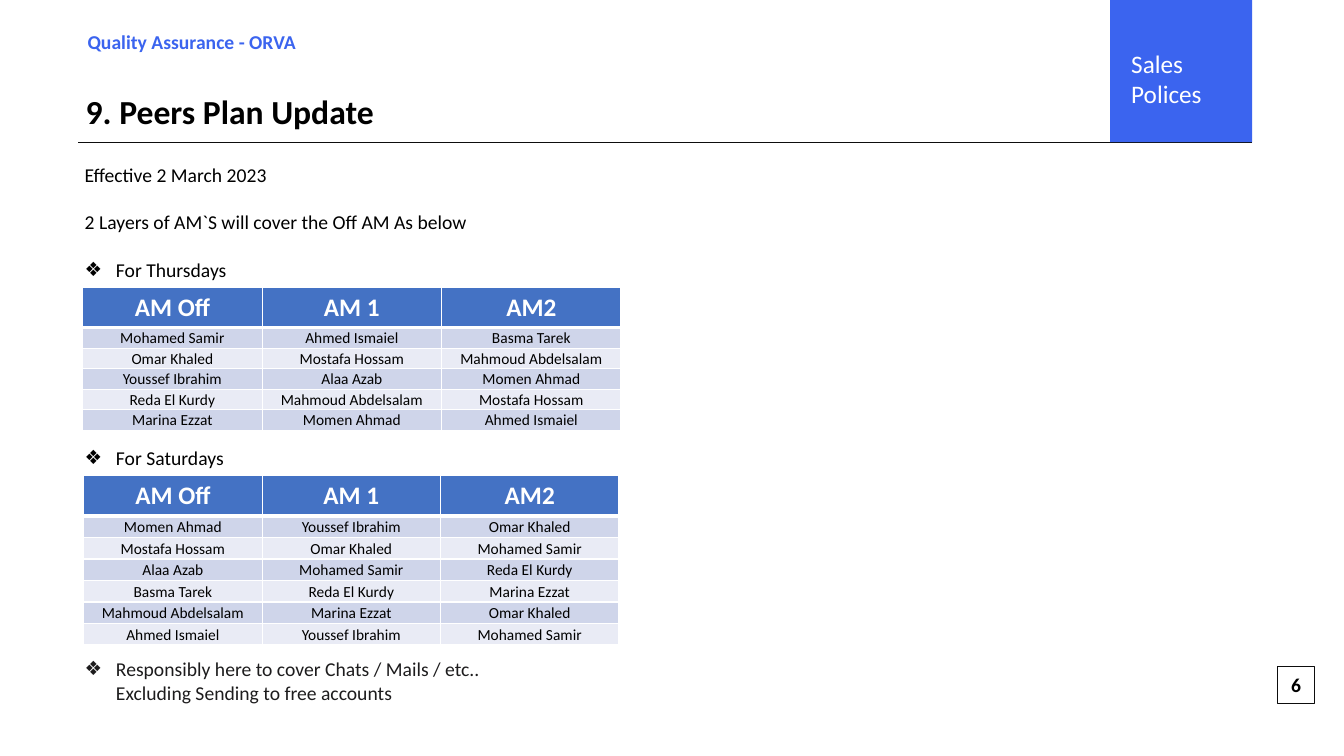
import dataclasses

import lxml.etree
import pptx
import pptx.dml.color
import pptx.enum.shapes
import pptx.enum.text
import pptx.oxml.ns
import pptx.util

Inches = pptx.util.Inches
Pt = pptx.util.Pt
Align = pptx.enum.text.PP_ALIGN
Anchor = pptx.enum.text.MSO_ANCHOR
Auto = pptx.enum.text.MSO_AUTO_SIZE

FONT = "Calibri"
PITCH = 16.8  # points from one body line to the next
HEAD_HIGH = 0.4
COLORS = {
    "black": "000000", "ink": "0D0D0D", "note": "1D1C1D", "white": "FFFFFF",
    "brand": "3B64EF", "head": "4472C4", "odd": "CFD5EA", "even": "E9EBF5",
}


@dataclasses.dataclass
class Line:
    text: str
    skip: int = 0  # empty body lines left above
    bullet: bool = False
    color: str = "black"


@dataclasses.dataclass
class Roster:
    left: float
    top: float
    width: float
    height: float
    rows: list[tuple[str, str, str]]


HEADS = ("AM Off", "AM 1", "AM2")
LINES = [
    Line("Effective 2 March 2023"),
    Line("2 Layers of AM`S will cover the Off AM As below", 1),
    Line("For Thursdays", 1, True),
    Line("For Saturdays", 7, True),
    Line("Responsibly here to cover Chats / Mails / etc..\n"
         "Excluding Sending to free accounts", 8, True, "note"),
]
ROSTERS = [
    Roster(0.82, 2.85, 5.34, 1.42, [
        ("Mohamed Samir", "Ahmed Ismaiel", "Basma Tarek"),
        ("Omar Khaled", "Mostafa Hossam", "Mahmoud Abdelsalam"),
        ("Youssef Ibrahim", "Alaa Azab", "Momen Ahmad"),
        ("Reda El Kurdy", "Mahmoud Abdelsalam", "Mostafa Hossam"),
        ("Marina Ezzat", "Momen Ahmad", "Ahmed Ismaiel"),
    ]),
    Roster(0.83, 4.72, 5.31, 1.68, [
        ("Momen Ahmad", "Youssef Ibrahim", "Omar Khaled"),
        ("Mostafa Hossam", "Omar Khaled", "Mohamed Samir"),
        ("Alaa Azab", "Mohamed Samir", "Reda El Kurdy"),
        ("Basma Tarek", "Reda El Kurdy", "Marina Ezzat"),
        ("Mahmoud Abdelsalam", "Marina Ezzat", "Omar Khaled"),
        ("Ahmed Ismaiel", "Youssef Ibrahim", "Mohamed Samir"),
    ]),
]


def tint(name: str) -> pptx.dml.color.RGBColor:
    return pptx.dml.color.RGBColor.from_string(COLORS[name])


def add_node(parent, tag: str, **attrs: str):
    return lxml.etree.SubElement(parent, pptx.oxml.ns.qn(tag), attrs)


def place(shape, left: float, top: float, width: float, height: float) -> None:
    shape.left, shape.top = Inches(left), Inches(top)
    shape.width, shape.height = Inches(width), Inches(height)


def write(para, text: str, size: float, color: str, bold: bool = False,
          align=Align.LEFT) -> None:
    """Fill a paragraph with runs, breaking the line at each newline."""
    para.alignment = align
    for i, part in enumerate(text.split("\n")):
        if i:
            para.add_line_break()
        run = para.add_run()
        run.text = part
        run.font.name, run.font.size, run.font.bold = FONT, Pt(size), bold
        run.font.color.rgb = tint(color)


def add_box(slide, left: float, top: float, width: float, height: float):
    box = slide.shapes.add_shape(
        pptx.enum.shapes.MSO_SHAPE.RECTANGLE,
        Inches(left), Inches(top), Inches(width), Inches(height))
    box.shadow.inherit = False
    box.text_frame.vertical_anchor = Anchor.MIDDLE
    return box


def add_title(slide) -> None:
    title = slide.shapes.title
    place(title, 0.75, 0.85, 3.17, 0.5)
    frame = title.text_frame
    frame.word_wrap, frame.auto_size = False, Auto.SHAPE_TO_FIT_TEXT
    frame.vertical_anchor = Anchor.TOP
    write(frame.paragraphs[0], "9. Peers Plan Update", 24, "black", True)


def add_body(slide) -> None:
    body = slide.placeholders[1]
    place(body, 0.74, 1.57, 12.28, 5.6)
    frame = body.text_frame
    frame.auto_size, frame.vertical_anchor = Auto.NONE, Anchor.TOP
    for i, line in enumerate(LINES):
        para = frame.add_paragraph() if i else frame.paragraphs[0]
        para.line_spacing = Pt(PITCH)
        para.space_before, para.space_after = Pt(PITCH * line.skip), Pt(0)
        write(para, line.text, 14, line.color)
        props = para._p.get_or_add_pPr()
        indent = Inches(0.31) if line.bullet else 0
        props.set("marL", str(indent))
        props.set("indent", str(-indent))
        if line.bullet:
            add_node(props, "a:buChar", char="❖")
        else:
            add_node(props, "a:buNone")


def edge_cell(cell, base: float) -> None:
    """Draw white cell borders, with the given bottom width in points."""
    props = cell._tc.get_or_add_tcPr()
    for side, wide in (("L", 1), ("R", 1), ("T", 1), ("B", base)):
        edge = add_node(props, f"a:ln{side}", w=str(Pt(wide)))
        add_node(add_node(edge, "a:solidFill"), "a:srgbClr", val=COLORS["white"])


def fill_cell(cell, text: str, row: int) -> None:
    edge_cell(cell, 1 if row else 3)
    cell.fill.solid()
    para = cell.text_frame.paragraphs[0]
    if row == 0:
        cell.fill.fore_color.rgb = tint("head")
        write(para, text, 18, "white", True, Align.CENTER)
        return
    cell.fill.fore_color.rgb = tint("odd" if row % 2 else "even")
    cell.vertical_anchor = Anchor.MIDDLE
    cell.margin_left = cell.margin_right = cell.margin_top = Inches(0.01)
    cell.margin_bottom = 0
    write(para, text, 11, "black", align=Align.CENTER)


def add_roster(slide, roster: Roster) -> None:
    rows = [HEADS, *roster.rows]
    table = slide.shapes.add_table(
        len(rows), len(HEADS), Inches(roster.left), Inches(roster.top),
        Inches(roster.width), Inches(roster.height)).table
    table.horz_banding = False
    row_high = (roster.height - HEAD_HIGH) / len(roster.rows)
    for r, names in enumerate(rows):
        table.rows[r].height = Inches(row_high if r else HEAD_HIGH)
        for c, name in enumerate(names):
            fill_cell(table.cell(r, c), name, r)


def add_frame(slide) -> None:
    """Draw the page number, header rule, department and section tag."""
    page = add_box(slide, 12.67, 6.61, 0.37, 0.37)
    page.fill.background()
    page.line.color.rgb, page.line.width = tint("ink"), Pt(1)
    write(page.text_frame.paragraphs[0], "6", 14, "black", True, Align.CENTER)

    rule = slide.shapes.add_connector(
        pptx.enum.shapes.MSO_CONNECTOR.STRAIGHT,
        Inches(12.42), Inches(1.41), Inches(0.77), Inches(1.41))
    rule.line.color.rgb, rule.line.width = tint("ink"), Pt(0.5)
    add_node(rule._element.spPr, "a:effectLst")

    dept = slide.shapes.add_textbox(
        Inches(0.77), Inches(0.25), Inches(2.3), Inches(0.34))
    dept.text_frame.word_wrap = True
    write(dept.text_frame.paragraphs[0], "Quality Assurance - ORVA", 14, "brand", True)

    tag = add_box(slide, 11.01, 0, 1.41, 1.41)
    tag.fill.solid()
    tag.fill.fore_color.rgb = tint("brand")
    tag.line.fill.background()
    tag.text_frame.margin_left, tag.text_frame.margin_top = Inches(0.21), Inches(0.19)
    write(tag.text_frame.paragraphs[0], "Sales", 18, "white")
    write(tag.text_frame.add_paragraph(), "Polices", 18, "white")


def main() -> None:
    deck = pptx.Presentation()
    deck.slide_width, deck.slide_height = Inches(13.33), Inches(7.5)
    slide = deck.slides.add_slide(deck.slide_layouts[1])
    add_title(slide)
    add_body(slide)
    add_frame(slide)
    for roster in ROSTERS:
        add_roster(slide, roster)
    deck.save("out.pptx")


if __name__ == "__main__":
    main()
